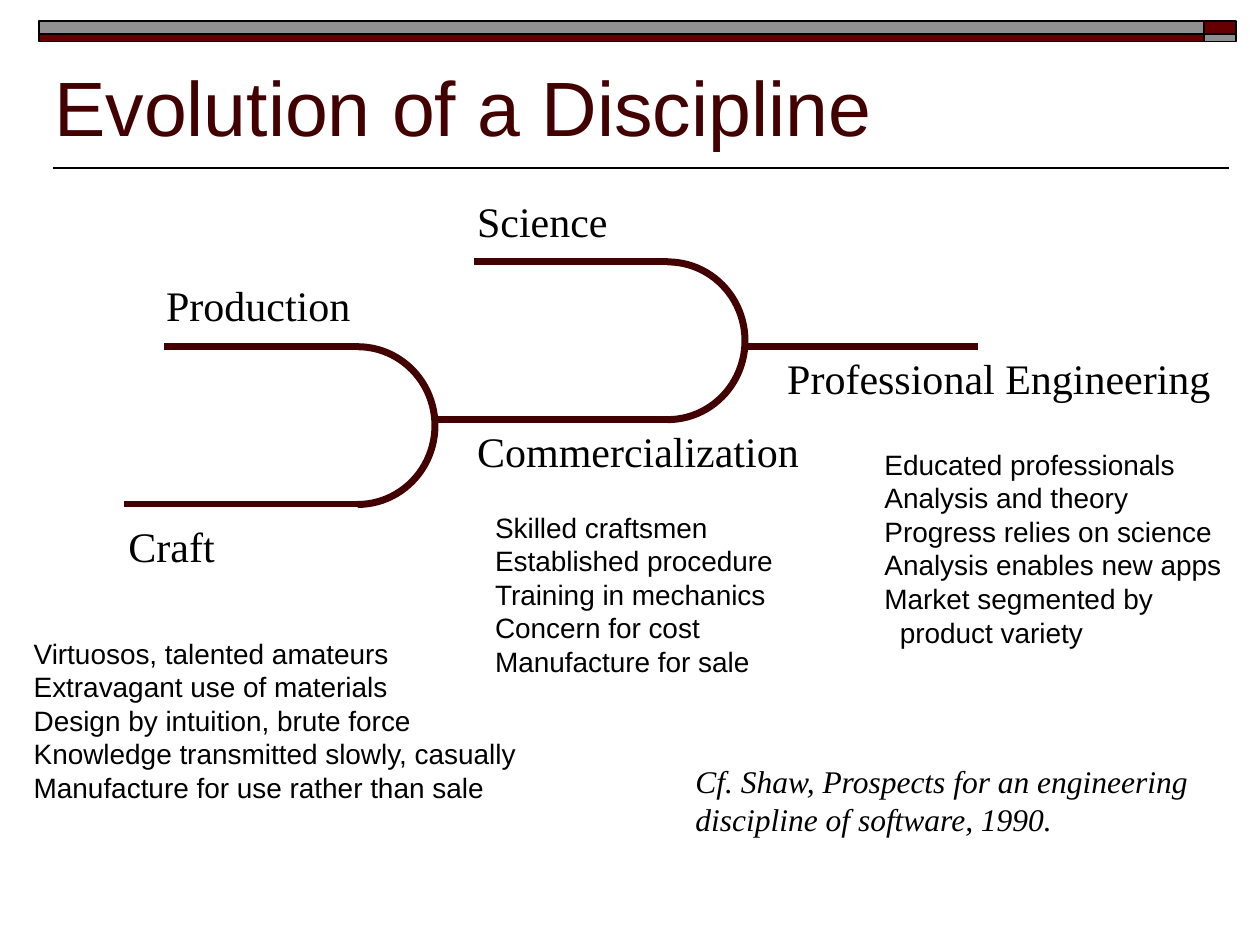
from pptx import Presentation
from pptx.dml.color import RGBColor
from pptx.enum.shapes import MSO_CONNECTOR, MSO_SHAPE
from pptx.enum.text import MSO_ANCHOR, MSO_AUTO_SIZE, PP_ALIGN
from pptx.oxml.ns import qn
from pptx.util import Cm, Pt
from lxml import etree

STRAIGHT = MSO_CONNECTOR.STRAIGHT
RECTANGLE, ARC = MSO_SHAPE.RECTANGLE, MSO_SHAPE.ARC
BOTTOM, LEFT = MSO_ANCHOR.BOTTOM, PP_ALIGN.LEFT
NO_AUTOFIT, FIT_SHAPE = MSO_AUTO_SIZE.NONE, MSO_AUTO_SIZE.SHAPE_TO_FIT_TEXT
COLORS = {"maroon": "660000", "dark": "420000", "gray": "909090", "black": "000000"}

presentation = Presentation()
presentation.slide_width, presentation.slide_height = Cm(25.4), Cm(19.05)
slide = presentation.slides.add_slide(presentation.slide_layouts[5])


def write_text(shape, text, font="Arial", size=16, color="black", italic=False):
    shape.text_frame.text = text
    for paragraph in shape.text_frame.paragraphs:
        paragraph.alignment = LEFT
        paragraph.font.name = font
        paragraph.font.size = Pt(size)
        paragraph.font.italic = italic
        paragraph.font.color.rgb = RGBColor.from_string(COLORS[color])


def add_line(x1, y1, x2, y2, color, width):
    line = slide.shapes.add_connector(STRAIGHT, Cm(x1), Cm(y1), Cm(x2), Cm(y2))
    line.line.color.rgb = RGBColor.from_string(COLORS[color])
    line.line.width = Pt(width)
    etree.SubElement(line._element.spPr, qn("a:effectLst"))


add_line(24.77, 3.38, 1.07, 3.38, "black", 1)

bars = [
    (24.28, 0.43, 0.64, 0.25, "maroon"),
    (0.79, 0.43, 23.49, 0.25, "gray"),
    (0.79, 0.68, 23.49, 0.16, "maroon"),
    (24.28, 0.68, 0.64, 0.16, "gray"),
]
for left, top, width, height, color in bars:
    bar = slide.shapes.add_shape(RECTANGLE, Cm(left), Cm(top), Cm(width), Cm(height))
    bar.shadow.inherit = False
    bar.fill.solid()
    bar.fill.fore_color.rgb = RGBColor.from_string(COLORS[color])
    bar.line.color.rgb = RGBColor.from_string(COLORS["black"])
    bar.line.width = Pt(1)

title = slide.shapes.title
title.left, title.top, title.width, title.height = Cm(0.84), Cm(1.07), Cm(24.13), Cm(2.11)
write_text(title, "Evolution of a Discipline", size=44, color="dark")
title.text_frame.vertical_anchor = BOTTOM
title.text_frame.auto_size = NO_AUTOFIT

branches = [
    (2.51, 7.21, 10.16),
    (3.3, 7.21, 6.99),
    (8.76, 13.46, 8.46),
    (9.55, 13.46, 5.28),
    (15.04, 19.71, 6.99),
]
for start, end, y in branches:
    add_line(end, y, start, y, "dark", 4)

for center, top in [(7.21, 6.99), (13.46, 5.28)]:
    arc = slide.shapes.add_shape(ARC, Cm(center - 1.56), Cm(top), Cm(3.12), Cm(3.18))
    arc.adjustments[0], arc.adjustments[1] = 162, 54
    arc.shadow.inherit = False
    arc.fill.background()
    arc.line.color.rgb = RGBColor.from_string(COLORS["dark"])
    arc.line.width = Pt(4)

stage = {"font": "Times New Roman", "size": 24}
citation = {"font": "Times New Roman", "size": 18, "italic": True}
texts = [
    (2.34, 10.36, 2.26, 1.27, "Craft", stage),
    (3.1, 5.51, 4.22, 1.27, "Production", stage),
    (9.37, 8.46, 7.01, 1.27, "Commercialization", stage),
    (9.37, 3.81, 3.15, 1.27, "Science", stage),
    (15.62, 6.99, 9.04, 1.27, "Professional Engineering", stage),
    (13.77, 15.24, 10.52, 1.78,
     "Cf. Shaw, Prospects for an engineering\ndiscipline of software, 1990.", citation),
    (0.43, 12.7, 10.31, 3.66,
     "Virtuosos, talented amateurs\nExtravagant use of materials\n"
     "Design by intuition, brute force\nKnowledge transmitted slowly, casually\n"
     "Manufacture for use rather than sale", {}),
    (9.73, 10.16, 6.12, 3.66,
     "Skilled craftsmen\nEstablished procedure\nTraining in mechanics\n"
     "Concern for cost\nManufacture for sale", {}),
    (17.58, 8.89, 7.32, 4.32,
     "Educated professionals\nAnalysis and theory\nProgress relies on science\n"
     "Analysis enables new apps\nMarket segmented by\nproduct variety", {}),
]
for left, top, width, height, text, style in texts:
    box = slide.shapes.add_textbox(Cm(left), Cm(top), Cm(width), Cm(height))
    write_text(box, text, **style)
    box.text_frame.word_wrap = False
    box.text_frame.auto_size = FIT_SHAPE

continuation = box.text_frame.paragraphs[-1]
continuation._p.get_or_add_pPr().set("marL", str(Cm(0.31)))

presentation.save("out.pptx")
